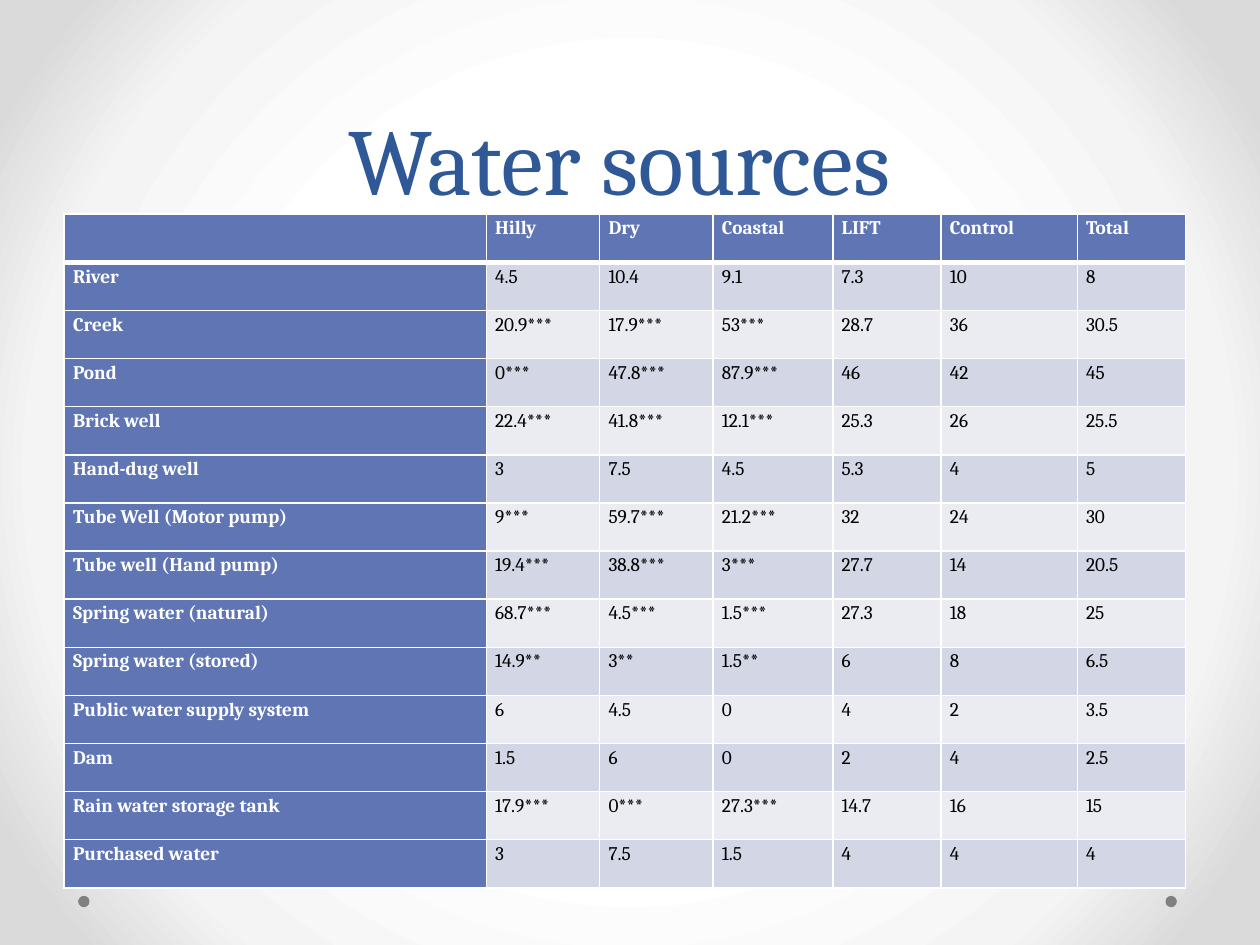
from typing import NamedTuple

from lxml import etree
from pptx import Presentation
from pptx.dml.color import RGBColor as Rgb
from pptx.enum.shapes import MSO_SHAPE as Kind
from pptx.enum.text import MSO_ANCHOR as Anchor, MSO_AUTO_SIZE as Fit, PP_ALIGN as Align
from pptx.oxml import parse_xml
from pptx.oxml.ns import nsdecls, qn
from pptx.util import Inches, Pt

FONT = "Cambria"
COLORS = {
    "title": "2F5897",
    "head": "6076B4",
    "odd": "D2D6E5",
    "even": "EAECF2",
    "white": "FFFFFF",
    "black": "000000",
    "dot": "808080",
}
STOPS = [(50, "FFFFFF"), (76, "F4F4F4"), (92, "DADADA")]
WIDTHS = [3.35, 0.9, 0.9, 0.95, 0.86, 1.08, 0.86]
HEADS = ["", "Hilly", "Dry", "Coastal", "LIFT", "Control", "Total"]


class Source(NamedTuple):
    name: str
    hilly: str
    dry: str
    coast: str
    lift: str
    control: str
    total: str


SOURCES = [
    Source("River", "4.5", "10.4", "9.1", "7.3", "10", "8"),
    Source("Creek", "20.9***", "17.9***", "53***", "28.7", "36", "30.5"),
    Source("Pond", "0***", "47.8***", "87.9***", "46", "42", "45"),
    Source("Brick well", "22.4***", "41.8***", "12.1***", "25.3", "26", "25.5"),
    Source("Hand-dug well", "3", "7.5", "4.5", "5.3", "4", "5"),
    Source("Tube Well (Motor pump)", "9***", "59.7***", "21.2***", "32", "24", "30"),
    Source("Tube well (Hand pump)", "19.4***", "38.8***", "3***", "27.7", "14", "20.5"),
    Source("Spring water (natural)", "68.7***", "4.5***", "1.5***", "27.3", "18", "25"),
    Source("Spring water (stored)", "14.9**", "3**", "1.5**", "6", "8", "6.5"),
    Source("Public water supply system", "6", "4.5", "0", "4", "2", "3.5"),
    Source("Dam", "1.5", "6", "0", "2", "4", "2.5"),
    Source("Rain water storage tank", "17.9***", "0***", "27.3***", "14.7", "16", "15"),
    Source("Purchased water", "3", "7.5", "1.5", "4", "4", "4"),
]


def put_text(frame, text: str, *, size: float, color: str, bold: bool = False,
             align=Align.LEFT, spacing=1.15, after: float = 0) -> None:
    para = frame.paragraphs[0]
    para.alignment = align
    para.line_spacing = spacing
    para.space_before = Pt(0)
    para.space_after = Pt(after)
    run = para.add_run()
    run.text = text
    font = run.font
    font.name, font.size, font.bold = FONT, Pt(size), bold
    font.color.rgb = Rgb.from_string(COLORS[color])


def set_back(slide) -> None:
    stops = "".join(
        f'<a:gs pos="{place * 1000}"><a:srgbClr val="{color}"/></a:gs>'
        for place, color in STOPS
    )
    back = parse_xml(
        f'<p:bg {nsdecls("p", "a")}><p:bgPr><a:gradFill rotWithShape="1">'
        f'<a:gsLst>{stops}</a:gsLst><a:path path="circle">'
        '<a:fillToRect l="50000" t="50000" r="50000" b="50000"/></a:path>'
        '</a:gradFill><a:effectLst/></p:bgPr></p:bg>'
    )
    slide.element.cSld.insert(0, back)


def add_dot(slide, left: float) -> None:
    dot = slide.shapes.add_shape(
        Kind.OVAL, Inches(left), Inches(7.11), Inches(0.09), Inches(0.09))
    dot.shadow.inherit = False
    dot.fill.solid()
    dot.fill.fore_color.rgb = Rgb.from_string(COLORS["dot"])
    dot.line.fill.background()


def set_edge(cell, side: str, width: float) -> None:
    props = cell._tc.get_or_add_tcPr()
    line = etree.SubElement(props, qn(f"a:ln{side}"), w=str(Pt(width)))
    fill = etree.SubElement(line, qn("a:solidFill"))
    etree.SubElement(fill, qn("a:srgbClr"), val=COLORS["white"])


def fill_cell(cell, text: str, row: int, col: int) -> None:
    label = row == 0 or col == 0
    cell.margin_left = cell.margin_right = Inches(0.07)
    cell.margin_top = cell.margin_bottom = 0
    for side in "LRTB":
        thick = (row, side) in ((0, "B"), (1, "T"))
        set_edge(cell, side, 3 if thick else 1)
    shade = "head" if label else "odd" if row % 2 else "even"
    cell.fill.solid()
    cell.fill.fore_color.rgb = Rgb.from_string(COLORS[shade])
    if text:
        put_text(cell.text_frame, text, size=11, bold=label,
                 color="white" if label else "black", after=6 if col else 0)


def add_grid(slide) -> None:
    rows = [HEADS, *SOURCES]
    high = Inches(5.35)
    grid = slide.shapes.add_table(
        len(rows), len(WIDTHS), Inches(0.51), Inches(1.7), Inches(sum(WIDTHS)), high).table
    grid.first_row = grid.horz_banding = False
    for col, width in zip(grid.columns, WIDTHS):
        col.width = Inches(width)
    for r, texts in enumerate(rows):
        grid.rows[r].height = high // len(rows)
        for c, text in enumerate(texts):
            fill_cell(grid.cell(r, c), text, r, c)


def main() -> None:
    deck = Presentation()
    deck.slide_width, deck.slide_height = Inches(10), Inches(7.5)
    slide = deck.slides.add_slide(deck.slide_layouts[5])
    set_back(slide)
    for left in (9.25, 0.62):
        add_dot(slide, left)
    title = slide.shapes.title
    title.left, title.top = Inches(0.5), Inches(0)
    title.width, title.height = Inches(9), Inches(1.75)
    frame = title.text_frame
    frame.auto_size = Fit.NONE
    frame.vertical_anchor = Anchor.BOTTOM
    put_text(frame, "Water sources ", size=54, color="title",
             align=Align.CENTER, spacing=Pt(58))
    add_grid(slide)
    deck.save("out.pptx")


if __name__ == "__main__":
    main()
